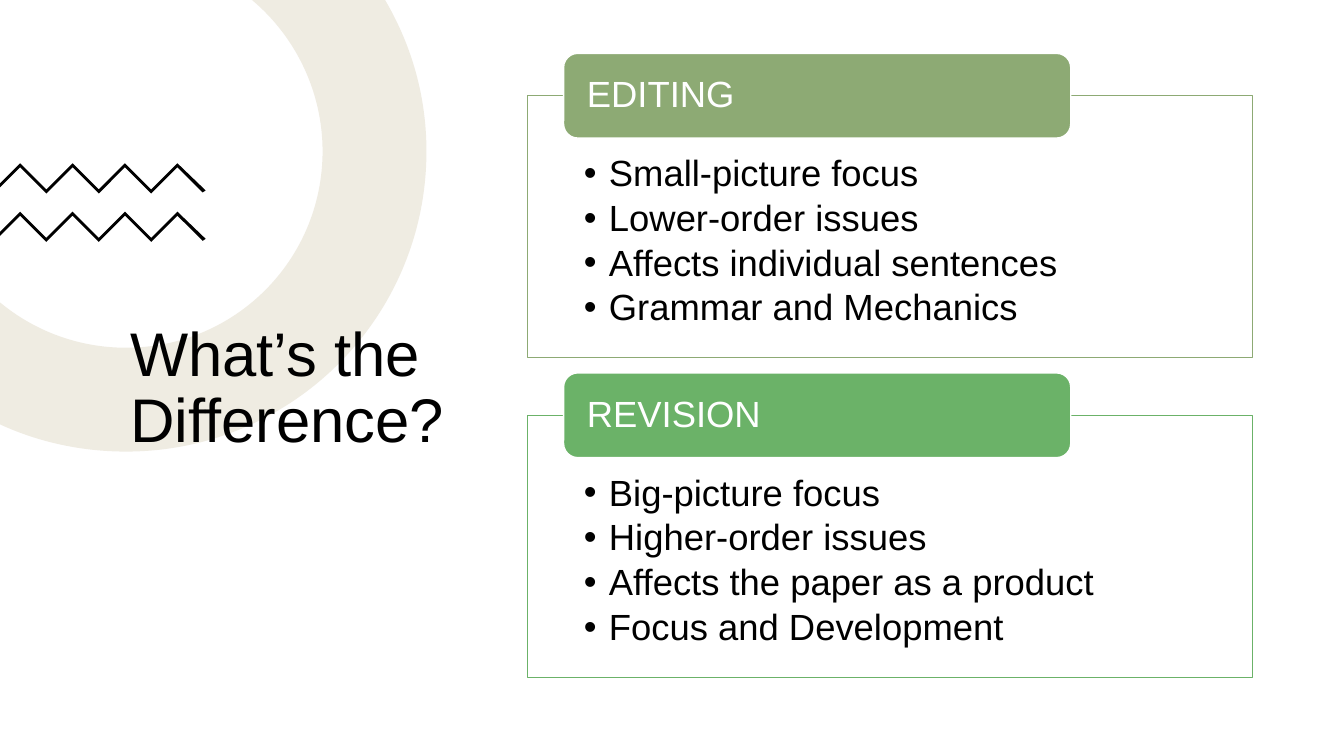
import math
from lxml import etree
from pptx import Presentation
from pptx.dml.color import RGBColor
from pptx.enum.shapes import MSO_SHAPE
from pptx.enum.text import MSO_ANCHOR, MSO_AUTO_SIZE, PP_ALIGN
from pptx.oxml.ns import qn
from pptx.util import Pt

PX = 9144
RECT, ROUND = MSO_SHAPE.RECTANGLE, MSO_SHAPE.ROUNDED_RECTANGLE
TOP, MIDDLE = MSO_ANCHOR.TOP, MSO_ANCHOR.MIDDLE
LEFT, FIXED = PP_ALIGN.LEFT, MSO_AUTO_SIZE.NONE
BLACK, WHITE, SAND = "000000", "FFFFFF", "B2A072"


def color(code):
    """Turn a hex string into a colour."""
    return RGBColor.from_string(code)


def apply(item, form):
    """Set each attribute named in a dict."""
    for name, value in form.items():
        setattr(item, name, value)


def arc(mid, radius):
    """Give the Bezier points of a circle from the top edge to the left edge."""
    x, y = mid
    turns = [-math.asin(y / radius), 0, math.pi / 2, math.acos(-x / radius)]

    def spot(turn, pull):
        """Give a point on the circle, pulled along its tangent."""
        cos, sin = math.cos(turn), math.sin(turn)
        return x + radius * (cos - pull * sin), y + radius * (sin + pull * cos)

    points = [spot(turns[0], 0)]
    for a, b in zip(turns, turns[1:]):
        pull = 4 / 3 * math.tan((b - a) / 4)
        points += [spot(a, pull), spot(b, -pull), spot(b, 0)]
    return points


class Deck:
    """Hold the style and the current slide."""

    font = "Arial"

    def __init__(self, width, height):
        """Start a deck with one title-only slide."""
        self.show = Presentation()
        apply(self.show, {"slide_width": width * PX, "slide_height": height * PX})
        self.slide = self.show.slides.add_slide(self.show.slide_layouts[5])

    def paint(self, shape, fill, line=None, alpha=100):
        """Fill and outline a shape."""
        shape.shadow.inherit = False
        shape.fill.solid()
        shape.fill.fore_color.rgb = color(fill)
        if alpha < 100:
            tint = shape.element.spPr.find(".//" + qn("a:srgbClr"))
            etree.SubElement(tint, qn("a:alpha"), val=str(alpha * 1000))
        if line:
            shape.line.color.rgb = color(line)
            shape.line.width = Pt(1)
        else:
            shape.line.fill.background()

    def shape(self, kind, box, fill, line, alpha=100):
        """Add a preset shape."""
        item = self.slide.shapes.add_shape(kind, *(v * PX for v in box))
        self.paint(item, fill, line, alpha)
        return item

    def outline(self, points, fill, alpha=100):
        """Add a closed shape through the given points."""
        pen = self.slide.shapes.build_freeform(*points[0], scale=PX)
        pen.add_line_segments(points[1:], close=True)
        item = pen.convert_to_shape()
        self.paint(item, fill, alpha=alpha)
        return item

    def ring(self, mid, outer, inner, fill, alpha):
        """Add a ring that is cut by the top and left edges."""
        rim, hole = arc(mid, outer), arc(mid, inner)[::-1]
        item = self.outline(rim + hole, fill, alpha)
        legs = list(item.element.iter(qn("a:lnTo")))
        join = len(rim) - 1
        for part in (legs[:join], legs[join + 1:]):
            for i in range(0, len(part), 3):
                curve = etree.Element(qn("a:cubicBezTo"))
                part[i].addprevious(curve)
                for leg in part[i:i + 3]:
                    curve.append(leg[0])
                    leg.getparent().remove(leg)

    def text(self, shape, lines, size, ink, inset, anchor=MIDDLE, after=0, bullet=False):
        """Write paragraphs into a shape."""
        frame = shape.text_frame
        sides = ("margin_left", "margin_top", "margin_right", "margin_bottom")
        apply(frame, dict(zip(sides, (v * PX for v in inset))))
        apply(frame, {"text": "\n".join(lines), "word_wrap": True,
                      "auto_size": FIXED, "vertical_anchor": anchor})
        for para in frame.paragraphs:
            apply(para, {"alignment": LEFT, "line_spacing": 0.9, "space_after": Pt(after)})
            apply(para.font, {"name": self.font, "size": Pt(size)})
            para.font.color.rgb = color(ink)
            if bullet:
                props = para._p.get_or_add_pPr()
                props.set("marL", str(25 * PX))
                props.set("indent", str(-25 * PX))
                etree.SubElement(props, qn("a:buFont"), typeface=self.font)
                etree.SubElement(props, qn("a:buChar"), char="•")

    def title(self, box, words):
        """Move, format and raise the title."""
        item = self.slide.shapes.title
        apply(item, dict(zip(("left", "top", "width", "height"), (v * PX for v in box))))
        self.text(item, [words], 44, BLACK, (10, 5, 10, 5))
        item.element.getparent().append(item.element)

    def zigzag(self, top):
        """Add a zigzag band that enters from the left edge."""
        crest = [(20 + 26 * i, top + 26 * (i % 2)) for i in range(7)]
        under = [(x, y + 4) for x, y in reversed(crest)]
        tip = [(204, top + 27), (201, top + 29)]
        self.outline(crest + tip + under + [(0, top + 24), (0, top + 20)], BLACK)

    def panel(self, top, tone, head, lines):
        """Add a bulleted box with a heading tab."""
        body = self.shape(RECT, (523, top, 719, 260), WHITE, tone, 90)
        self.text(body, lines, 26, BLACK, (56, 59, 56, 20), TOP, 3.9, True)
        tab = self.shape(ROUND, (559, top - 42, 503, 84), tone, WHITE)
        self.text(tab, [head], 26, WHITE, (19, 0, 19, 0))


def main():
    """Build the slide and save it."""
    deck = Deck(1333, 750)
    deck.ring((125, 150), 298, 195, SAND, 20)
    deck.title((119, 299, 350, 175), "What’s the Difference?")
    for top in (162, 210):
        deck.zigzag(top)
    deck.panel(95, "8DAA74", "EDITING", [
        "Small-picture focus", "Lower-order issues",
        "Affects individual sentences", "Grammar and Mechanics"])
    deck.panel(412, "6BB268", "REVISION", [
        "Big-picture focus", "Higher-order issues",
        "Affects the paper as a product", "Focus and Development"])
    deck.show.save("out.pptx")


if __name__ == "__main__":
    main()
